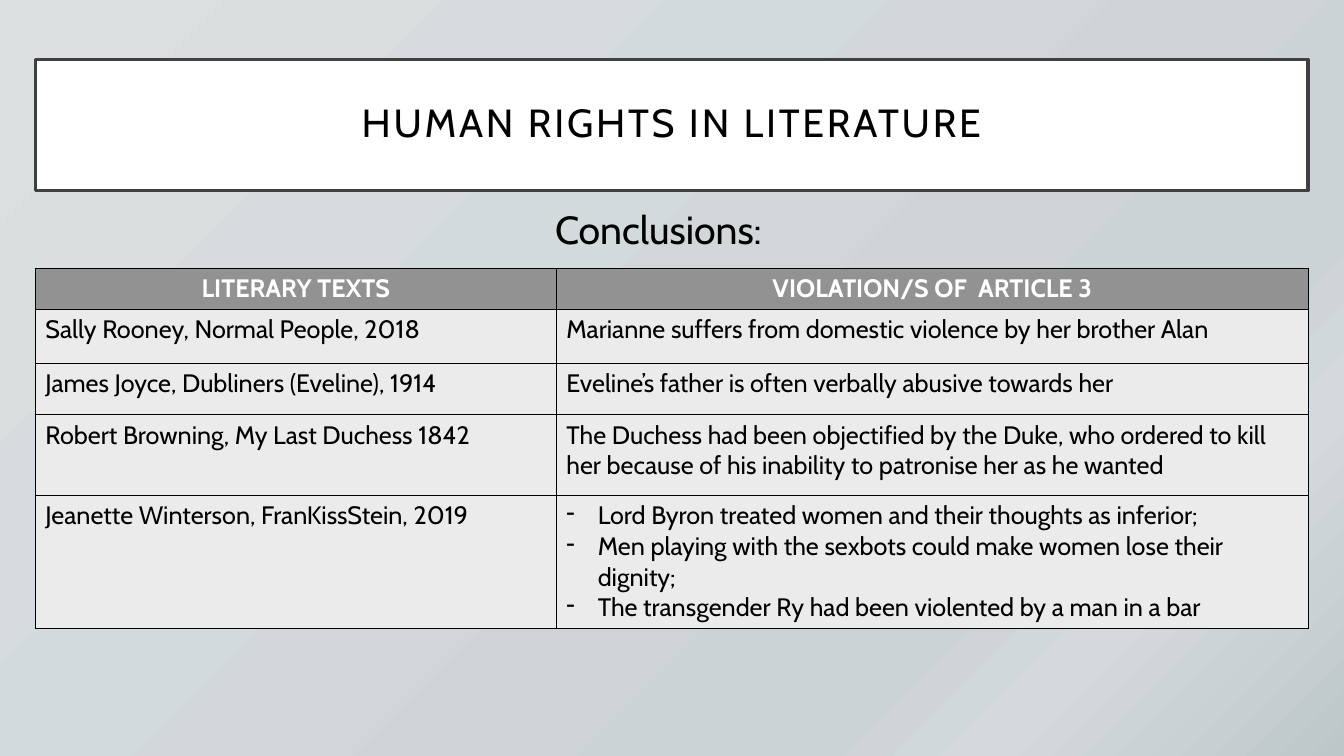
from copy import deepcopy

from lxml import etree
from pptx import Presentation
from pptx import util as u
from pptx.dml.color import RGBColor
from pptx.enum import shapes, text
from pptx.oxml import ns

BLACK, WHITE = "000000", "FFFFFF"
HEADER_FILL, BODY_FILL, TITLE_LINE = "929292", "EBEBEB", "404040"
BACKGROUND = [(0, "DBE0E1"), (74, "CCD3D4"), (83, "D4DADB"), (100, "BEC7C8")]

LEFT, WIDTH = 0.89, 32.08
COLUMN_WIDTHS = [13.13, 18.95]
ROW_HEIGHTS = [1.04, 1.35, 1.3, 2.03, 3.3]
ROWS = [
    ("LITERARY TEXTS", "VIOLATION/S OF  ARTICLE 3"),
    ("Sally Rooney, Normal People, 2018",
     "Marianne suffers from domestic violence by her brother Alan"),
    ("James Joyce, Dubliners (Eveline), 1914",
     "Eveline’s father is often verbally abusive towards her"),
    ("Robert Browning, My Last Duchess 1842",
     "The Duchess had been objectified by the Duke, who ordered to kill "
     "her because of his inability to patronise her as he wanted"),
    ("Jeanette Winterson, FranKissStein, 2019",
     ["Lord Byron treated women and their thoughts as inferior;",
      "Men playing with the sexbots could make women lose their dignity;",
      "The transgender Ry had been violented by a man in a bar"]),
]


def color(value):
    return RGBColor.from_string(value)


def apply(target, values):
    for name, value in values.items():
        setattr(target, name, value)


def add_xml(parent, tag, **attributes):
    return etree.SubElement(parent, ns.qn(tag), attributes)


class SlideBuilder:
    font = "Cabin"

    def __init__(self, deck):
        self.slide = deck.slides.add_slide(deck.slide_layouts[6])

    def background(self, stops, angle):
        fill = self.slide.background.fill
        fill.gradient()
        fill.gradient_angle = angle
        stop_list = next(self.slide.element.iter(ns.qn("a:gsLst")))
        template = deepcopy(stop_list[0])
        for stop in list(stop_list):
            stop_list.remove(stop)
        for position, _ in stops:
            stop = deepcopy(template)
            stop.set("pos", str(position * 1000))
            stop_list.append(stop)
        for stop, (_, value) in zip(fill.gradient_stops, stops):
            stop.color.rgb = color(value)

    def fill_text(self, frame, lines, size, ink=BLACK, bold=False, spacing=None,
                  bullet=None, **paragraph_format):
        """Fill a text frame with one paragraph for each line."""
        for index, line in enumerate(lines):
            para = frame.add_paragraph() if index else frame.paragraphs[0]
            apply(para, paragraph_format)
            span = para.add_run()
            span.text = line
            apply(span.font, {"name": self.font, "size": u.Pt(size), "bold": bold})
            span.font.color.rgb = color(ink)
            if spacing:
                span.font._element.set("spc", str(spacing * 100))
            if bullet:
                properties = para._p.get_or_add_pPr()
                indent = u.Cm(0.79)
                properties.set("marL", str(indent))
                properties.set("indent", str(-indent))
                add_xml(properties, "a:buChar", char=bullet)

    def title(self, line, left, top, width, height):
        box = self.slide.shapes.add_shape(
            shapes.MSO_SHAPE.RECTANGLE, *map(u.Cm, (left, top, width, height)))
        box.shadow.inherit = False
        box.fill.solid()
        box.fill.fore_color.rgb = color(WHITE)
        box.line.color.rgb = color(TITLE_LINE)
        box.line.width = u.Pt(2.5)
        inset = u.Cm(0.51)
        apply(box.text_frame, {
            "word_wrap": True, "vertical_anchor": text.MSO_ANCHOR.MIDDLE,
            "margin_left": inset, "margin_right": inset,
            "margin_top": inset, "margin_bottom": inset})
        self.fill_text(box.text_frame, [line], 28, spacing=2,
                       alignment=text.PP_ALIGN.CENTER, line_spacing=0.9)

    def label(self, line, left, top, width, height):
        box = self.slide.shapes.add_textbox(*map(u.Cm, (left, top, width, height)))
        apply(box.text_frame, {"word_wrap": True,
                               "auto_size": text.MSO_AUTO_SIZE.SHAPE_TO_FIT_TEXT})
        self.fill_text(box.text_frame, [line], 28)

    def borders(self, cell):
        properties = cell._tc.get_or_add_tcPr()
        for index, side in enumerate(("a:lnL", "a:lnR", "a:lnT", "a:lnB")):
            line = add_xml(properties, side, w=str(u.Pt(1)))
            add_xml(add_xml(line, "a:solidFill"), "a:srgbClr", val=BLACK)
            properties.insert(index, line)

    def table(self, rows, left, top, widths, heights):
        grid = self.slide.shapes.add_table(
            len(rows), len(widths),
            *map(u.Cm, (left, top, sum(widths), sum(heights)))).table
        for column, width in zip(grid.columns, widths):
            column.width = u.Cm(width)
        for row, height in zip(grid.rows, heights):
            row.height = u.Cm(height)
        for row_index, row in enumerate(rows):
            header = row_index == 0
            for column_index, content in enumerate(row):
                cell = grid.cell(row_index, column_index)
                cell.fill.solid()
                cell.fill.fore_color.rgb = color(HEADER_FILL if header else BODY_FILL)
                self.borders(cell)
                listed = isinstance(content, list)
                self.fill_text(cell.text_frame, content if listed else [content], 18,
                               ink=WHITE if header else BLACK, bold=header,
                               bullet="-" if listed else None,
                               alignment=text.PP_ALIGN.CENTER if header
                               else text.PP_ALIGN.LEFT)


def main():
    deck = Presentation()
    apply(deck, {"slide_width": u.Cm(33.87), "slide_height": u.Cm(19.05)})
    page = SlideBuilder(deck)
    page.background(BACKGROUND, 315)
    page.title("HUMAN RIGHTS IN LITERATURE", LEFT, 1.5, WIDTH, 3.3)
    page.table(ROWS, LEFT, 6.76, COLUMN_WIDTHS, ROW_HEIGHTS)
    page.label("Conclusions:", 13.74, 5.05, 6.4, 1.45)
    deck.save("out.pptx")


if __name__ == "__main__":
    main()
